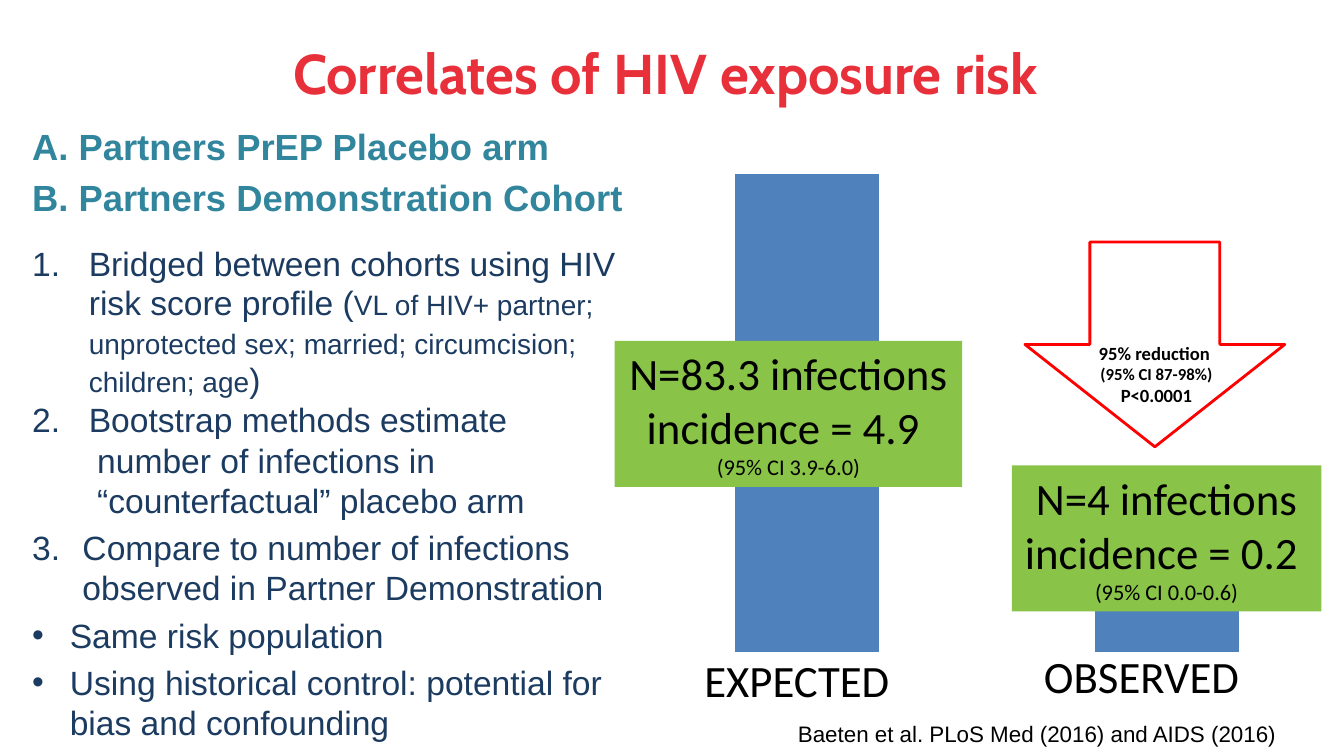
from dataclasses import dataclass

from lxml.etree import SubElement
from pptx import Presentation
from pptx.chart.data import CategoryChartData
from pptx.dml.color import RGBColor as Rgb
from pptx.enum.chart import XL_CHART_TYPE as ChartType
from pptx.enum.shapes import MSO_SHAPE as Preset
from pptx.enum.text import MSO_ANCHOR as Anchor, PP_ALIGN as Align
from pptx.oxml import parse_xml
from pptx.oxml.ns import nsdecls, qn
from pptx.util import Cm, Pt


@dataclass(frozen=True)
class Theme:
    title_font: str = "Cabin"
    body_font: str = "Arial"
    label_font: str = "Calibri"
    red: str = "E8303B"
    teal: str = "31859C"
    navy: str = "1C3B61"
    black: str = "000000"
    green: str = "89C348"
    blue: str = "4F81BD"
    arrow_red: str = "FF0000"
    title: float = 40
    heading: float = 26
    body: float = 24
    detail: float = 20
    label: float = 32
    small: float = 16
    result: float = 13.3
    interval: float = 12


class SlideBuilder:
    """Draws styled elements on one title-only slide."""

    def __init__(self, deck, theme):
        self.theme = theme
        self.slide = deck.slides.add_slide(deck.slide_layouts[5])
        self.shapes = self.slide.shapes

    def style(self, font, name, size, color, bold=False):
        font.name, font.bold = name, bold
        font.color.rgb = Rgb.from_string(color)
        if size:
            font.size = Pt(size)

    def title(self, wording, area):
        heading = self.shapes.title
        heading.left, heading.top, heading.width, heading.height = map(Cm, area)
        frame = heading.text_frame
        frame.text = wording
        frame.word_wrap = True
        frame.vertical_anchor = Anchor.MIDDLE
        line = frame.paragraphs[0]
        line.alignment = Align.CENTER
        self.style(line.font, self.theme.title_font, self.theme.title, self.theme.red, True)

    def box(self, area, fill=None):
        box = self.shapes.add_textbox(*map(Cm, area))
        if fill:
            box.fill.solid()
            box.fill.fore_color.rgb = Rgb.from_string(fill)
        box.text_frame.word_wrap = True
        return box.text_frame

    def paragraph(self, frame, index):
        return frame.add_paragraph() if index else frame.paragraphs[0]

    def label(self, area, lines, font=None, fill=None, align=Align.CENTER, bold=False):
        frame = self.box(area, fill)
        for index, (wording, size) in enumerate(lines):
            line = self.paragraph(frame, index)
            line.text = wording
            line.alignment = align
            self.style(line.font, font or self.theme.label_font, size, self.theme.black, bold)

    def outline(self, area, headings, points):
        frame = self.box(area)
        for index, wording in enumerate(headings):
            line = self.paragraph(frame, index)
            line.text = wording
            line.line_spacing = Pt(31)
            if index:
                line.space_before = Pt(5.3)
            self.style(line.font, self.theme.body_font, self.theme.heading, self.theme.teal, True)
        for parts, marker, indent, before, pitch in points:
            self.point(frame.add_paragraph(), parts, marker, indent, before, pitch)

    def point(self, line, parts, marker, indent, before, pitch):
        props = line._p.get_or_add_pPr()
        props.set("marL", str(Cm(indent)))
        if marker:
            props.set("indent", str(-Cm(indent)))
            SubElement(props, qn("a:buFont"), typeface=self.theme.body_font)
            if marker == "•":
                SubElement(props, qn("a:buChar"), char=marker)
            else:
                SubElement(props, qn("a:buAutoNum"), type="arabicPeriod", startAt=marker)
        line.line_spacing = Pt(pitch)
        line.space_before = Pt(before)
        mixed = len(parts) > 1
        for wording, size in parts:
            run = line.add_run()
            run.text = wording
            if mixed:
                run.font.size = Pt(size)
        shared_size = None if mixed else parts[0][1]
        self.style(line.font, self.theme.body_font, shared_size, self.theme.navy)

    def columns(self, area, categories, values):
        data = CategoryChartData()
        data.categories = categories
        data.add_series("Series 1", values)
        chart = self.shapes.add_chart(ChartType.COLUMN_CLUSTERED, *map(Cm, area), data).chart
        chart.has_legend = chart.has_title = False
        self.style(chart.font, self.theme.label_font, 10, self.theme.black)
        scale = chart.value_axis
        scale.minimum_scale, scale.maximum_scale = 80, 102.5
        scale.has_major_gridlines = False
        scale.tick_labels.number_format = "0%"
        scale.tick_labels.number_format_is_linked = False
        scale.visible = chart.category_axis.visible = False
        plot = chart.plots[0]
        plot.gap_width, plot.vary_by_categories = 150, False
        fill = plot.series[0].format.fill
        fill.solid()
        fill.fore_color.rgb = Rgb.from_string(self.theme.blue)
        plot_area = chart._chartSpace.chart.plotArea
        for automatic in plot_area.findall(qn("c:layout")):
            plot_area.remove(automatic)
        sides = "".join(f'<c:{side} val="{share}"/>' for side, share in
                        (("x", 0.02), ("y", 0.02), ("w", 0.96), ("h", 0.96)))
        plot_area.insert(0, parse_xml(
            f'<c:layout {nsdecls("c")}><c:manualLayout><c:layoutTarget val="inner"/>'
            f'<c:xMode val="edge"/><c:yMode val="edge"/>{sides}</c:manualLayout></c:layout>'))

    def down_arrow(self, area):
        arrow = self.shapes.add_shape(Preset.DOWN_ARROW, *map(Cm, area))
        arrow.shadow.inherit = False
        arrow.fill.background()
        arrow.line.color.rgb = Rgb.from_string(self.theme.arrow_red)
        arrow.line.width = Pt(2)


def main():
    deck = Presentation()
    deck.slide_width, deck.slide_height = Cm(33.87), Cm(19.05)
    theme = Theme()
    builder = SlideBuilder(deck, theme)
    builder.title("Correlates of HIV exposure risk ", (2.08, 0.23, 29.69, 3.18))

    body, detail = theme.body, theme.detail
    builder.outline(
        (0.56, 3.02, 15.9, 15.8),
        ["A. Partners PrEP Placebo arm", "B. Partners Demonstration Cohort"],
        [
            ([("Bridged between cohorts using HIV risk score profile (", body),
              ("VL of HIV+ partner; unprotected sex; married; circumcision; children; age", detail),
              (")", body)], "1", 1.43, 18, 27.7),
            ([("Bootstrap methods estimate", body)], "2", 1.43, 0, 28.75),
            ([("number of infections in", body)], None, 1.64, 0, 28.75),
            ([("“counterfactual” placebo arm", body)], None, 1.64, 0, 28.75),
            ([("Compare to number of infections observed in Partner Demonstration", body)],
             "3", 1.27, 5, 28.75),
            ([("Same risk population", body)], "•", 0.95, 5, 28.75),
            ([("Using historical control: potential for bias and confounding", body)],
             "•", 0.95, 5, 28.75),
        ])
    builder.label((19.86, 18.03, 13.82, 0.91),
                  [("Baeten et al. PLoS Med (2016) and AIDS (2016)", theme.small)],
                  font=theme.body_font, align=Align.LEFT)

    builder.columns((15.42, 2.59, 18.9, 14.12), ["1", "2"], [100, 85])
    for group, name_area, count_area, count, incidence, interval in (
        ("EXPECTED", (17.5, 16.33, 6.32, 1.63), (15.49, 8.59, 8.76, 3.68),
         "N=83.3 infections", "incidence = 4.9 ", "(95% CI 3.9-6.0)"),
        ("OBSERVED", (26.06, 16.23, 6.53, 1.63), (25.5, 11.73, 7.8, 3.68),
         "N=4 infections", "incidence = 0.2 ", "(95% CI 0.0-0.6)"),
    ):
        builder.label(name_area, [(group, theme.label)], align=Align.LEFT)
        builder.label(count_area, [(count, theme.label), (incidence, theme.label),
                                   (interval, theme.small)], fill=theme.green)

    builder.label((26.92, 8.48, 4.45, 1.9),
                  [("95% reduction ", theme.result), ("(95% CI 87-98%)", theme.interval),
                   ("P<0.0001", theme.result)], bold=True)
    builder.down_arrow((25.83, 6.1, 6.55, 5.16))
    deck.save("out.pptx")


if __name__ == "__main__":
    main()
